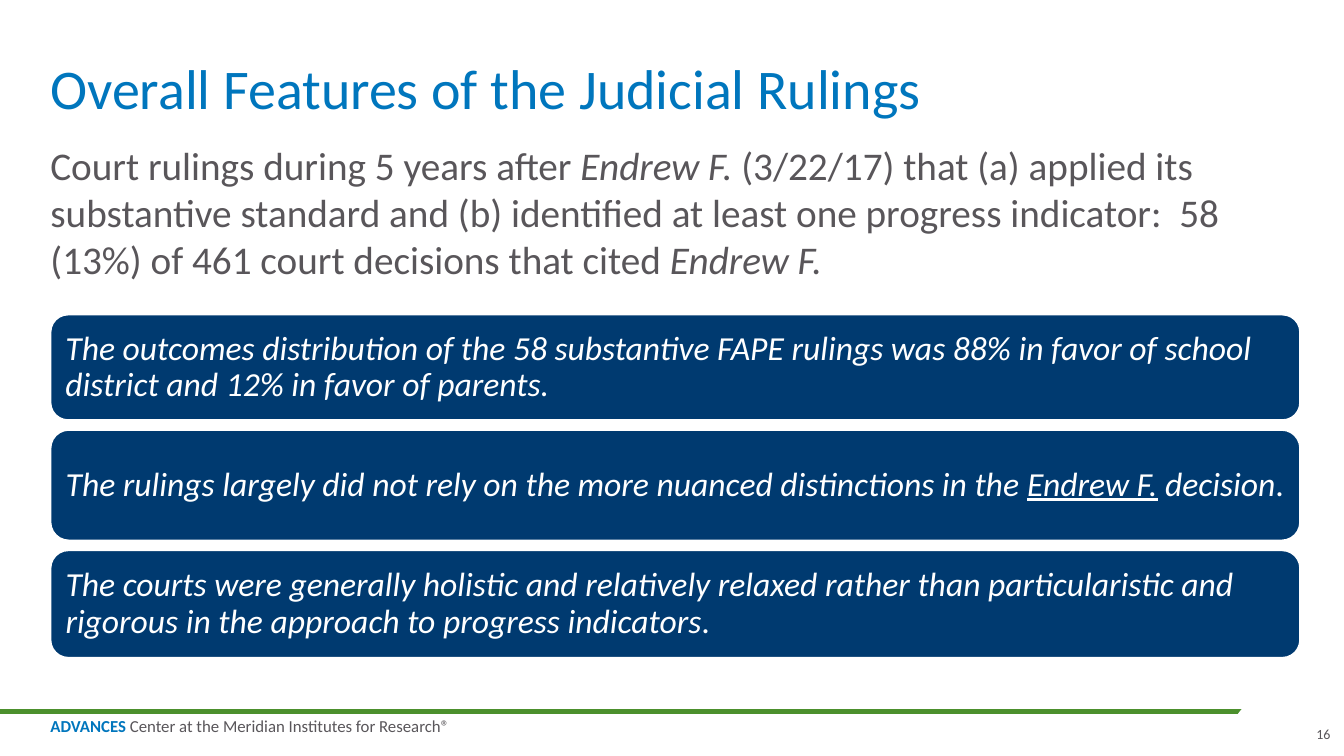
"""Build the slide on overall features of the judicial rulings."""
import pptx
import pptx.util
import pptx.dml.color
import pptx.enum.shapes
import pptx.enum.text
import lxml.etree

Pt = pptx.util.Pt
RGBColor = pptx.dml.color.RGBColor
MSO_SHAPE = pptx.enum.shapes.MSO_SHAPE
PP_ALIGN = pptx.enum.text.PP_ALIGN
MSO_ANCHOR = pptx.enum.text.MSO_ANCHOR
MSO_AUTO_SIZE = pptx.enum.text.MSO_AUTO_SIZE

BLUE = RGBColor(0x00, 0x76, 0xBD)
NAVY = RGBColor(0x00, 0x3A, 0x70)
GRAY = RGBColor(0x59, 0x56, 0x5A)
GREEN = RGBColor(0x4C, 0x90, 0x2D)
WHITE = RGBColor(0xFF, 0xFF, 0xFF)
DRAWING = "{http://schemas.openxmlformats.org/drawingml/2006/main}"
LEFT, WIDTH = 36, 892.8


def set_frame(frame, anchor, margin=0, wrap=True):
    frame.margin_left = frame.margin_right = Pt(margin)
    frame.margin_top = frame.margin_bottom = Pt(margin)
    frame.vertical_anchor = anchor
    frame.word_wrap = wrap
    frame.auto_size = MSO_AUTO_SIZE.NONE


def write(para, spans, size, color):
    para.font.name = "Calibri"
    para.font.size = Pt(size)
    para.font.color.rgb = color
    for text, styles in spans:
        span = para.add_run()
        span.text = text
        if "i" in styles:
            span.font.italic = True
        if "u" in styles:
            span.font.underline = True


deck = pptx.Presentation()
deck.slide_width, deck.slide_height = Pt(960), Pt(540)
page = deck.slides.add_slide(deck.slide_layouts[1])

rule = page.shapes.add_connector(
    pptx.enum.shapes.MSO_CONNECTOR.STRAIGHT, Pt(0), Pt(508.3), Pt(936), Pt(508.3))
rule.line.color.rgb = GREEN
rule.line.width = Pt(3)
lxml.etree.SubElement(rule._element.spPr, DRAWING + "effectLst")

rule_end = page.shapes.add_shape(
    MSO_SHAPE.OVAL, Pt(875.5), Pt(487.4), Pt(85.7), Pt(41.8))
rule_end.rotation = 332.1
rule_end.shadow.inherit = False
rule_end.fill.solid()
rule_end.fill.fore_color.rgb = WHITE
rule_end.line.fill.background()

title = page.shapes.title
title.left, title.top, title.width, title.height = Pt(LEFT), Pt(0), Pt(WIDTH), Pt(87.1)
set_frame(title.text_frame, MSO_ANCHOR.BOTTOM)
para = title.text_frame.paragraphs[0]
para.alignment = PP_ALIGN.LEFT
para.line_spacing = 0.9
write(para, [("Overall Features of the Judicial Rulings", "")], 40, BLUE)

body = page.placeholders[1]
body.left, body.top, body.width, body.height = Pt(LEFT), Pt(100.8), Pt(WIDTH), Pt(111.6)
set_frame(body.text_frame, MSO_ANCHOR.TOP)
para = body.text_frame.paragraphs[0]
para.space_before = Pt(0)
properties = para._p.get_or_add_pPr()
properties.set("marL", "0")
properties.set("indent", "0")
lxml.etree.SubElement(properties, DRAWING + "buNone")
write(para, [
    ("Court rulings during 5 years after ", ""),
    ("Endrew F.", "i"),
    (" (3/22/17) that (a) applied its substantive standard and (b) identified "
     "at least one progress indicator:  58 (13%) of 461 court decisions that cited ", ""),
    ("Endrew F.", "i"),
], 28, GRAY)

findings = [
    (75.6, [("The outcomes distribution of the 58 substantive FAPE rulings was 88% in favor "
             "of school district and 12% in favor of parents.", "i")]),
    (79.2, [("The rulings largely did not rely on the more nuanced distinctions in the ", "i"),
            ("Endrew F.", "iu"), (" decision", "i"), (".", "")]),
    (77, [("The courts were generally holistic and relatively relaxed rather than "
           "particularistic and rigorous in the approach to progress indicators", "i"),
          (".", "")]),
]
top = 224.6
for height, spans in findings:
    box = page.shapes.add_shape(
        MSO_SHAPE.ROUNDED_RECTANGLE, Pt(LEFT), Pt(top), Pt(WIDTH), Pt(height))
    box.shadow.inherit = False
    box.fill.solid()
    box.fill.fore_color.rgb = NAVY
    box.line.color.rgb = WHITE
    box.line.width = Pt(1.5)
    set_frame(box.text_frame, MSO_ANCHOR.MIDDLE, 7.2)
    box.text_frame.margin_right = Pt(5)
    para = box.text_frame.paragraphs[0]
    para.alignment = PP_ALIGN.LEFT
    para.line_spacing = 0.9
    write(para, spans, 24, WHITE)
    top += height + 6.8

footer = page.shapes.add_textbox(Pt(LEFT), Pt(513.4), Pt(289.4), Pt(12.2))
set_frame(footer.text_frame, MSO_ANCHOR.TOP, wrap=False)
para = footer.text_frame.paragraphs[0]
para.line_spacing = 0.85
write(para, [("ADVANCES", ""), (" Center at the Meridian Institutes for Research®", "")], 12, GRAY)
para.runs[0].font.bold = True
para.runs[0].font.color.rgb = BLUE

number = page.shapes.add_textbox(Pt(938.2), Pt(518.4), Pt(12.2), Pt(12.2))
set_frame(number.text_frame, MSO_ANCHOR.BOTTOM, wrap=False)
para = number.text_frame.paragraphs[0]
para.alignment = PP_ALIGN.RIGHT
write(para, [("16", "")], 10, GRAY)

deck.save("out.pptx")
